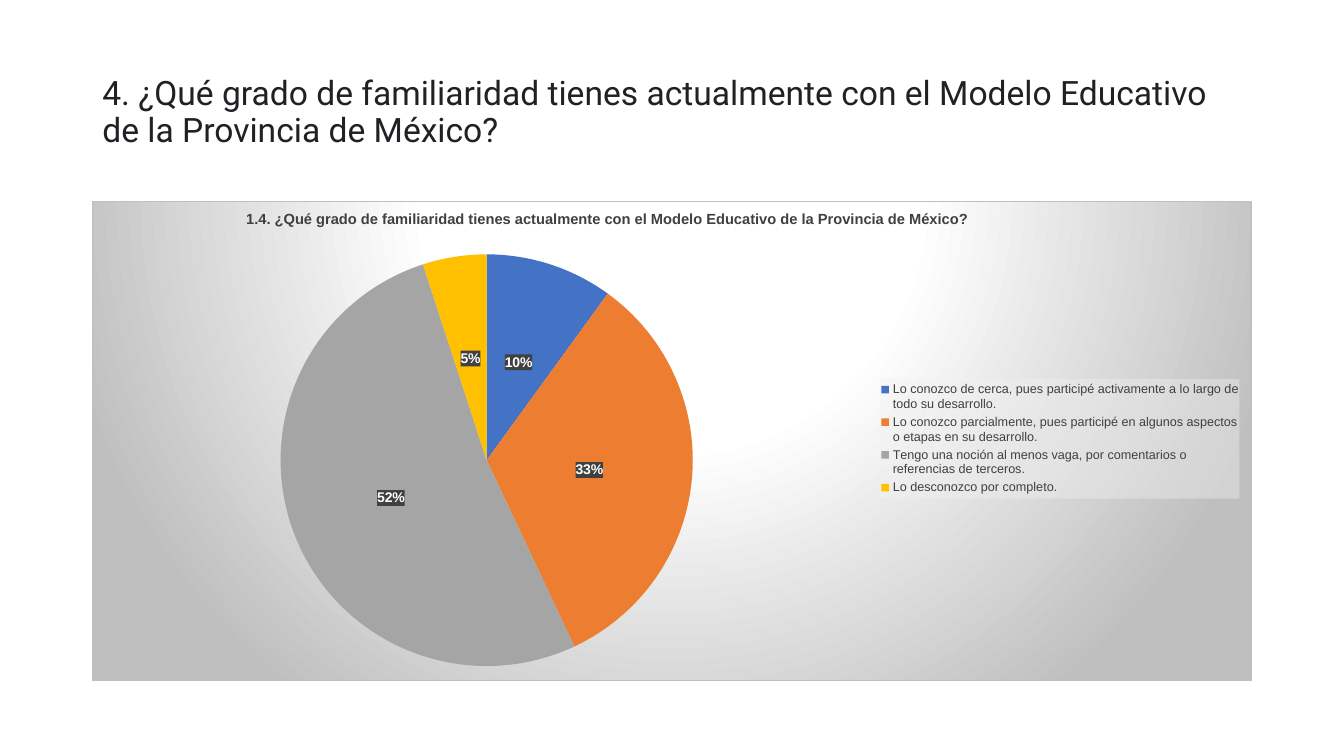
"""Build a slide with a pie chart about familiarity with the educational model."""
import dataclasses

import lxml.etree
import pptx
import pptx.chart.data
import pptx.dml.color
import pptx.enum.chart
import pptx.enum.text
import pptx.oxml
import pptx.oxml.ns
import pptx.util

QUESTION = "¿Qué grado de familiaridad tienes actualmente con el Modelo Educativo de la Provincia de México?"
NAMESPACES = pptx.oxml.ns.nsdecls("c", "a")


@dataclasses.dataclass(frozen=True)
class Answer:
    text: str
    percent: int
    color: str


@dataclasses.dataclass(frozen=True)
class Box:
    left: float
    top: float
    width: float = 0
    height: float = 0


ANSWERS = [
    Answer("Lo conozco de cerca, pues participé activamente a lo largo de todo su desarrollo.", 10, "4472C4"),
    Answer("Lo conozco parcialmente, pues participé en algunos aspectos o etapas en su desarrollo.", 33, "ED7D31"),
    Answer("Tengo una noción al menos vaga, por comentarios o referencias de terceros.", 52, "A5A5A5"),
    Answer("Lo desconozco por completo.", 5, "FFC000"),
]
TITLE_BOX = Box(2.33, 1.01, 29.21, 3.68)
CHART_BOX = Box(2.33, 5.07, 29.21, 12.09)
CHART_TITLE_PLACE = Box(0.13, 0.01)
PIE_PLACE = Box(0.16, 0.11, 0.36, 0.86)
LEGEND_PLACE = Box(0.68, 0.37, 0.31, 0.25)


def in_cm(box: Box) -> list[pptx.util.Length]:
    return [pptx.util.Cm(length) for length in dataclasses.astuple(box)]


def rgb(color: str) -> pptx.dml.color.RGBColor:
    return pptx.dml.color.RGBColor.from_string(color)


def style_font(font, size: float, color: str, name: str = "Arial", bold: bool = False) -> None:
    font.size = pptx.util.Pt(size)
    font.color.rgb = rgb(color)
    font.name = name
    font.bold = bold


def solid_fill(color: str, opacity: int) -> str:
    return f'<a:solidFill><a:srgbClr val="{color}"><a:alpha val="{opacity * 1000}"/></a:srgbClr></a:solidFill>'


def shape_properties(content: str) -> lxml.etree.ElementBase:
    return pptx.oxml.parse_xml(f"<c:spPr {NAMESPACES}>{content}</c:spPr>")


def backdrop() -> lxml.etree.ElementBase:
    stops = "".join(
        f'<a:gs pos="{position * 1000}"><a:srgbClr val="{color}"/></a:gs>'
        for position, color in [(0, "FFFFFF"), (39, "FFFFFF"), (100, "BFBFBF")]
    )
    return shape_properties(
        f'<a:gradFill><a:gsLst>{stops}</a:gsLst><a:path path="circle">'
        '<a:fillToRect l="50000" t="-80000" r="50000" b="180000"/></a:path></a:gradFill>'
        f'<a:ln w="9525">{solid_fill("BFBFBF", 100)}</a:ln>'
    )


def place(parent: lxml.etree.ElementBase, box: Box, index: int, inner: bool = False) -> None:
    for layout in parent.findall(pptx.oxml.ns.qn("c:layout")):
        parent.remove(layout)
    target = '<c:layoutTarget val="inner"/>' if inner else ""
    modes = '<c:xMode val="edge"/><c:yMode val="edge"/>'
    lengths = zip("xywh", dataclasses.astuple(box))
    values = "".join(f'<c:{name} val="{length}"/>' for name, length in lengths if length)
    parent.insert(index, pptx.oxml.parse_xml(
        f"<c:layout {NAMESPACES}><c:manualLayout>{target}{modes}{values}</c:manualLayout></c:layout>"
    ))


def add_title(slide) -> None:
    shape = slide.shapes.add_textbox(*in_cm(TITLE_BOX))
    text_frame = shape.text_frame
    text_frame.word_wrap = True
    text_frame.vertical_anchor = pptx.enum.text.MSO_ANCHOR.MIDDLE
    text_frame.text = f"4. {QUESTION}"
    paragraph = text_frame.paragraphs[0]
    paragraph.line_spacing = 0.9
    style_font(paragraph.runs[0].font, 24, "202124", "Roboto")


def style_chart_title(chart) -> None:
    text_frame = chart.chart_title.text_frame
    text_frame.text = f"1.4. {QUESTION}"
    style_font(text_frame.paragraphs[0].runs[0].font, 10.5, "404040", bold=True)


def style_legend(chart) -> None:
    chart.has_legend = True
    chart.legend.position = pptx.enum.chart.XL_LEGEND_POSITION.RIGHT
    chart.legend.include_in_layout = False
    style_font(chart.legend.font, 9, "404040")


def style_slices(chart) -> None:
    chart.plots[0].vary_by_categories = True
    series = chart.plots[0].series[0]
    for index, answer in enumerate(ANSWERS):
        fill = series.points[index].format.fill
        fill.solid()
        fill.fore_color.rgb = rgb(answer.color)
    labels = series.data_labels
    labels.show_value = False
    labels.show_percentage = True
    labels.number_format = "0%"
    labels.number_format_is_linked = False
    labels.position = pptx.enum.chart.XL_LABEL_POSITION.CENTER
    style_font(labels.font, 10, "FFFFFF", bold=True)


def finish_chart_xml(chart) -> None:
    def find(name: str) -> lxml.etree.ElementBase:
        return chart.element.find(f".//{pptx.oxml.ns.qn(name)}")

    place(find("c:title"), CHART_TITLE_PLACE, 1)
    place(find("c:plotArea"), PIE_PLACE, 0, inner=True)
    legend = find("c:legend")
    place(legend, LEGEND_PLACE, 1)
    legend.find(pptx.oxml.ns.qn("c:overlay")).addnext(shape_properties(solid_fill("F2F2F2", 39)))
    label_text = find("c:dLbls").find(pptx.oxml.ns.qn("c:txPr"))
    label_text.addprevious(shape_properties(solid_fill("404040", 90)))
    find("c:chart").addnext(backdrop())


def add_pie(slide) -> None:
    data = pptx.chart.data.CategoryChartData()
    data.categories = [answer.text for answer in ANSWERS]
    data.add_series("Series 1", [answer.percent for answer in ANSWERS])
    chart = slide.shapes.add_chart(pptx.enum.chart.XL_CHART_TYPE.PIE, *in_cm(CHART_BOX), data).chart
    style_font(chart.font, 10, "000000")
    style_chart_title(chart)
    style_legend(chart)
    style_slices(chart)
    finish_chart_xml(chart)


def main() -> None:
    presentation = pptx.Presentation()
    presentation.slide_width = pptx.util.Cm(33.87)
    presentation.slide_height = pptx.util.Cm(19.05)
    slide = presentation.slides.add_slide(presentation.slide_layouts[6])
    add_title(slide)
    add_pie(slide)
    presentation.save("out.pptx")


if __name__ == "__main__":
    main()
